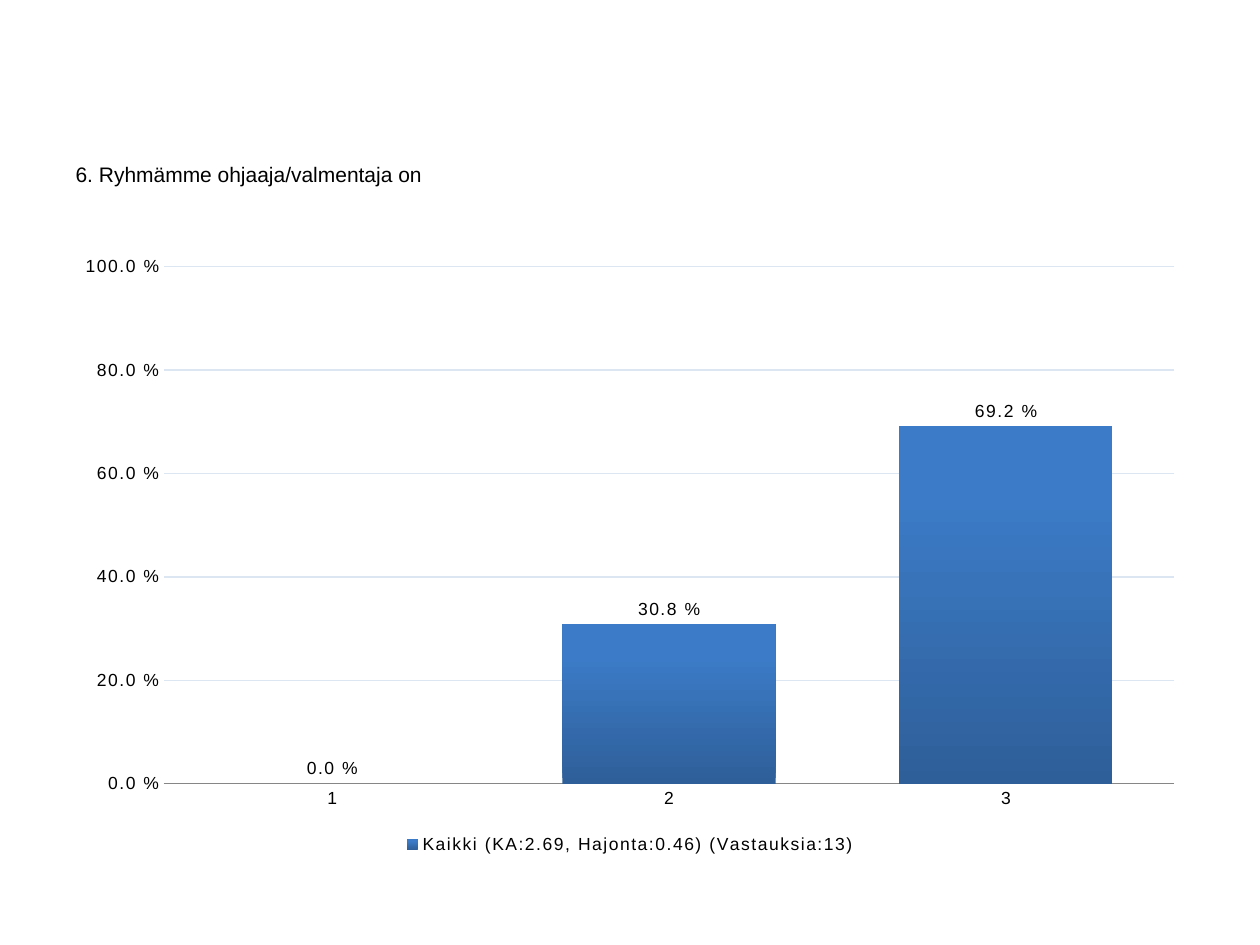
import pptx
import pptx.chart.data
import pptx.dml.color
import pptx.enum.chart
import pptx.oxml.ns
import pptx.oxml.xmlchemy
import pptx.util
from pptx.util import Cm, Pt

BLACK = pptx.dml.color.RGBColor(0x00, 0x00, 0x00)
GRID = pptx.dml.color.RGBColor(0xDC, 0xE6, 0xF2)
AXIS = pptx.dml.color.RGBColor(0x86, 0x86, 0x86)
BAR_BOTTOM = pptx.dml.color.RGBColor(0x2E, 0x5F, 0x99)
BAR_TOP = pptx.dml.color.RGBColor(0x3C, 0x7B, 0xC7)
PERCENT = "0.0\\ %"


class SurveySlide:
    def __init__(self, slide, font_name="Arial"):
        self.slide = slide
        self.font_name = font_name

    def style(self, font, size):
        font.name = self.font_name
        font.size = Pt(size)
        font.color.rgb = BLACK

    def question(self, text, left, top, width, height):
        """Put the question in the body placeholder, without a bullet."""
        body = self.slide.placeholders[1]
        body.left, body.top, body.width, body.height = left, top, width, height
        body.text_frame.text = text
        paragraph = body.text_frame.paragraphs[0]
        self.style(paragraph.font, 12)
        properties = paragraph._p.get_or_add_pPr()
        properties.set("marL", "0")
        properties.set("indent", "0")
        properties.insert(0, pptx.oxml.xmlchemy.OxmlElement("a:buNone"))

    def answers(self, name, shares, left, top, width, height):
        """Draw the share of each answer as a column."""
        data = pptx.chart.data.CategoryChartData(number_format=PERCENT)
        data.categories = list(shares)
        data.add_series(name, list(shares.values()))
        chart = self.slide.shapes.add_chart(
            pptx.enum.chart.XL_CHART_TYPE.COLUMN_CLUSTERED,
            left, top, width, height, data).chart
        chart.has_title = False
        chart.has_legend = True
        chart.legend.position = pptx.enum.chart.XL_LEGEND_POSITION.BOTTOM
        chart.legend.include_in_layout = False

        columns = chart.plots[0]
        columns.gap_width = 58
        columns.vary_by_categories = False
        columns.has_data_labels = True
        labels = columns.data_labels
        labels.show_value = True
        labels.number_format = PERCENT
        labels.number_format_is_linked = False
        labels.position = pptx.enum.chart.XL_LABEL_POSITION.OUTSIDE_END

        fill = columns.series[0].format.fill
        fill.gradient()
        fill.gradient_angle = 90
        bottom, top_stop = fill.gradient_stops
        bottom.color.rgb, bottom.position = BAR_BOTTOM, 0
        top_stop.color.rgb, top_stop.position = BAR_TOP, 0.8

        answer_axis, share_axis = chart.category_axis, chart.value_axis
        for axis in (answer_axis, share_axis):
            axis.major_tick_mark = pptx.enum.chart.XL_TICK_MARK.NONE
            axis.minor_tick_mark = pptx.enum.chart.XL_TICK_MARK.NONE
        answer_axis.format.line.color.rgb = AXIS
        answer_axis.format.line.width = Pt(0.75)
        share_axis.minimum_scale = 0
        share_axis.maximum_scale = 1
        share_axis.major_unit = 0.2
        share_axis.format.line.fill.background()
        share_axis.major_gridlines.format.line.color.rgb = GRID
        share_axis.major_gridlines.format.line.width = Pt(0.75)
        share_axis.tick_labels.number_format = PERCENT
        share_axis.tick_labels.number_format_is_linked = False

        for part in (chart, chart.legend, labels,
                     answer_axis.tick_labels, share_axis.tick_labels):
            self.style(part.font, 10)
        for character in chart.element.iter(pptx.oxml.ns.qn("a:defRPr")):
            character.set("spc", "100")


def main():
    deck = pptx.Presentation()
    deck.slide_width, deck.slide_height = Cm(25.4), Cm(19.05)
    slide = deck.slides.add_slide(deck.slide_layouts[1])
    title = slide.shapes.title.element
    title.getparent().remove(title)

    survey = SurveySlide(slide)
    survey.question("6. Ryhmämme ohjaaja/valmentaja on",
                    Cm(1.27), Cm(3.12), Cm(22.86), Cm(1.5))
    survey.answers("Kaikki (KA:2.69, Hajonta:0.46) (Vastauksia:13)",
                   {"1": 0, "2": 0.308, "3": 0.692},
                   Cm(1.27), Cm(4.93), Cm(22.86), Cm(12.4))
    deck.save("out.pptx")


if __name__ == "__main__":
    main()
